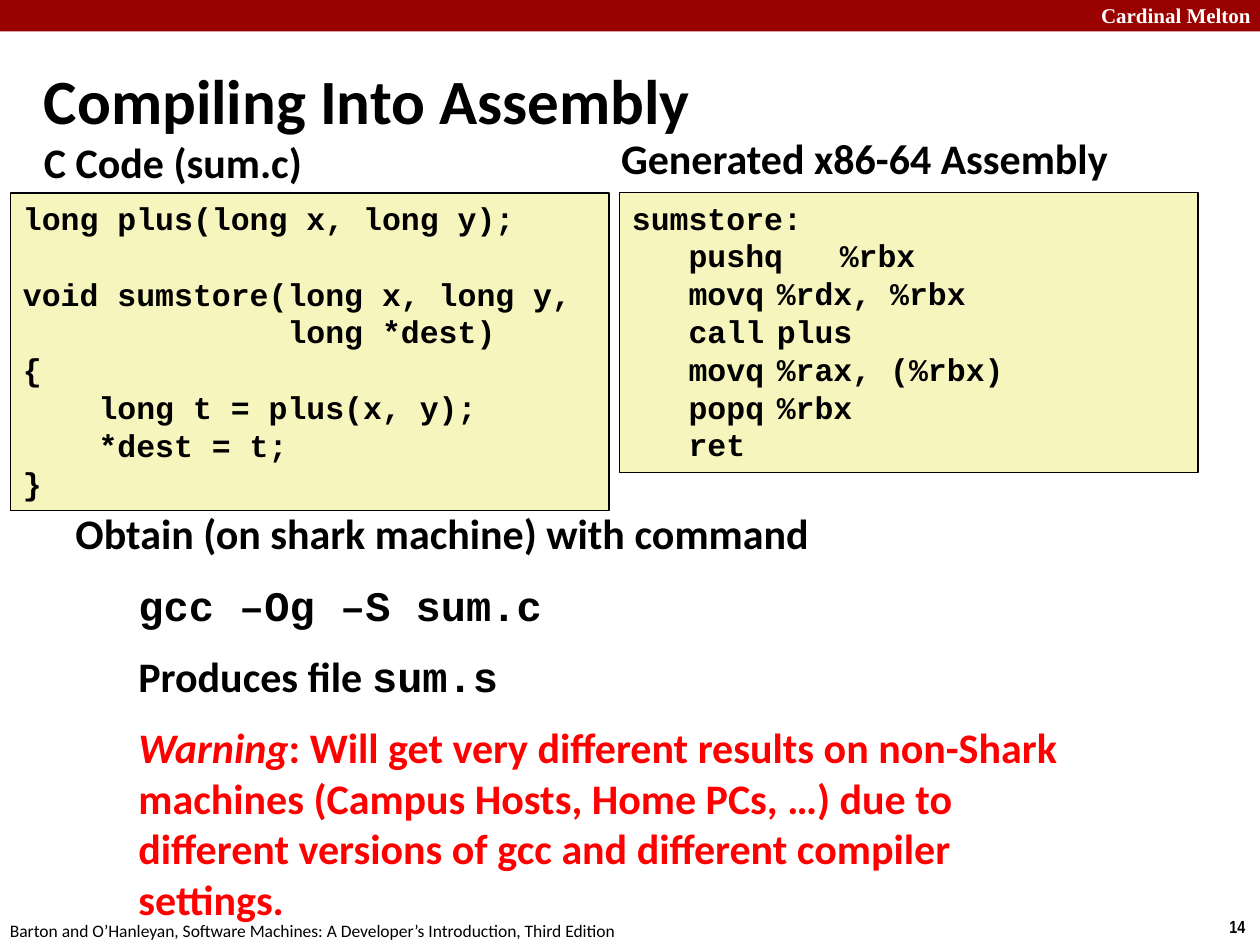
import pptx
import pptx.dml.color
import pptx.enum.shapes
import pptx.enum.text
import pptx.oxml
import pptx.oxml.ns
import pptx.util

Pt = pptx.util.Pt
COLORS = {"bar": "990000", "code": "F6F5BD", "ink": "000000",
          "paper": "FFFFFF", "warning": "FF0000"}
BODY, MONO = "Calibri", "Courier New"
CODE_SIZE = 18
CHAR = CODE_SIZE * 0.6  # width of one monospaced character
CODE_LINE = 21.6
OPERAND = 11 * CHAR  # where the operand column starts
TAB_STEP = 72  # default tab spacing

# Each code line: (indent in characters, text)
C_CODE = [
    (0, "long plus(long x, long y);"),
    (0, "void sumstore(long x, long y,"),
    (14, "long *dest)"),
    (0, "{"),
    (4, "long t = plus(x, y);"),
    (4, "*dest = t;"),
    (0, "}"),
]
ASSEMBLY = [
    (0, "sumstore:"),
    (3, "pushq\t%rbx"),
    (3, "movq\t%rdx, %rbx"),
    (3, "call\tplus"),
    (3, "movq\t%rax, (%rbx)"),
    (3, "popq\t%rbx"),
    (3, "ret"),
]


def rgb(name):
    return pptx.dml.color.RGBColor.from_string(COLORS[name])


def add_run(p, text, size, font=BODY, color="ink", bold=True, italic=False):
    r = p.add_run()
    r.text = text
    r.font.size, r.font.name = Pt(size), font
    r.font.bold, r.font.italic = bold, italic
    r.font.color.rgb = rgb(color)


def indent(p, left, first=0):
    pPr = p._p.get_or_add_pPr()
    pPr.set("marL", str(Pt(left)))
    pPr.set("indent", str(Pt(first)))


def add_tab(p, left, stop):
    """Start at left and tab to stop, one default tab step past the margin."""
    margin = stop - TAB_STEP
    indent(p, margin, left - margin)
    p._p.get_or_add_pPr().append(pptx.oxml.parse_xml(
        f'<a:tabLst {pptx.oxml.ns.nsdecls("a")}>'
        f'<a:tab pos="{Pt(stop)}" algn="l"/></a:tabLst>'))


def add_rect(s, box, fill, line=None):
    sp = s.shapes.add_shape(pptx.enum.shapes.MSO_SHAPE.RECTANGLE, *map(Pt, box))
    sp.shadow.inherit = False
    sp.fill.solid()
    sp.fill.fore_color.rgb = rgb(fill)
    if line:
        sp.line.color.rgb = rgb(line)
        sp.line.width = Pt(1)
    else:
        sp.line.fill.background()
    return sp


def add_frame(s, box, wrap=True):
    tf = s.shapes.add_textbox(*map(Pt, box)).text_frame
    tf.word_wrap = wrap
    return tf


def add_label(s, box, text, size, wrap=True, middle=False, **style):
    tf = add_frame(s, box, wrap)
    if middle:
        tf.vertical_anchor = pptx.enum.text.MSO_ANCHOR.MIDDLE
    add_run(tf.paragraphs[0], text, size, **style)


def header(s, box):
    x, y, w, h = box
    add_rect(s, box, "bar")
    add_label(s, (x + w - 97.9, y - 2.2, 103, 21.6), "Cardinal Melton", 12,
              font="Times New Roman", color="paper")


def footer(s, box):
    x, y, w, h = box
    add_label(s, (x + w - 24.5, y, 24.5, h), "14", 10, wrap=False,
              font="Arial Narrow")
    add_label(s, (x - 1.4, y + 2.2, 366, h),
              "Barton and O’Hanleyan, Software Machines: "
              "A Developer’s Introduction, Third Edition",
              10, wrap=False, bold=False)


def code_panel(s, box, lines, gap_before=None):
    """Fill a panel with code, leaving one empty line before line gap_before."""
    tf = add_rect(s, box, "code", "ink").text_frame
    tf.word_wrap = True
    tf.vertical_anchor = pptx.enum.text.MSO_ANCHOR.TOP
    for i, (cols, text) in enumerate(lines):
        p = tf.paragraphs[0] if i == 0 else tf.add_paragraph()
        p.alignment = pptx.enum.text.PP_ALIGN.LEFT
        if i == gap_before:
            p.space_before = Pt(CODE_LINE)
        if "\t" in text:
            add_tab(p, cols * CHAR, OPERAND)
        else:
            indent(p, cols * CHAR)
        add_run(p, text, CODE_SIZE, MONO)


def notes(s, box):
    warning = {"color": "warning"}
    rows = [
        (0, [("Obtain (on shark machine) with command", {})]),
        (36, [("gcc –Og –S sum.c", {"font": MONO})]),
        (36, [("Produces file ", {}), ("sum.s", {"font": MONO})]),
        (36, [("Warning", {"italic": True, **warning}),
              (": Will get very different results on non-Shark machines "
               "(Campus Hosts, Home PCs, …) due to different versions of gcc "
               "and different compiler settings.", warning)]),
    ]
    tf = add_frame(s, box)
    for i, (left, runs) in enumerate(rows):
        p = tf.paragraphs[0] if i == 0 else tf.add_paragraph()
        indent(p, left)
        if i:
            p.space_before = Pt(12)
        for text, style in runs:
            add_run(p, text, 24, **style)


def main():
    prs = pptx.Presentation()
    prs.slide_width, prs.slide_height = Pt(720), Pt(540)
    s = prs.slides.add_slide(prs.slide_layouts[6])

    header(s, (0, 0, 720, 18))
    footer(s, (0, 520, 720, 19.4))
    add_label(s, (18, 34.6, 539, 44), "Compiling Into Assembly", 36, middle=True)

    # C source on the left, assembly on the right
    add_label(s, (18, 74.2, 192, 29), "C Code (sum.c)", 24)
    code_panel(s, (6, 110.2, 342, 181.6), C_CODE, gap_before=1)
    add_label(s, (347.8, 72, 324, 32.4), "Generated x86-64 Assembly", 24)
    code_panel(s, (354, 110, 330.5, 160), ASSEMBLY)

    notes(s, (36, 286.6, 588, 268.6))
    prs.save("out.pptx")


if __name__ == "__main__":
    main()
